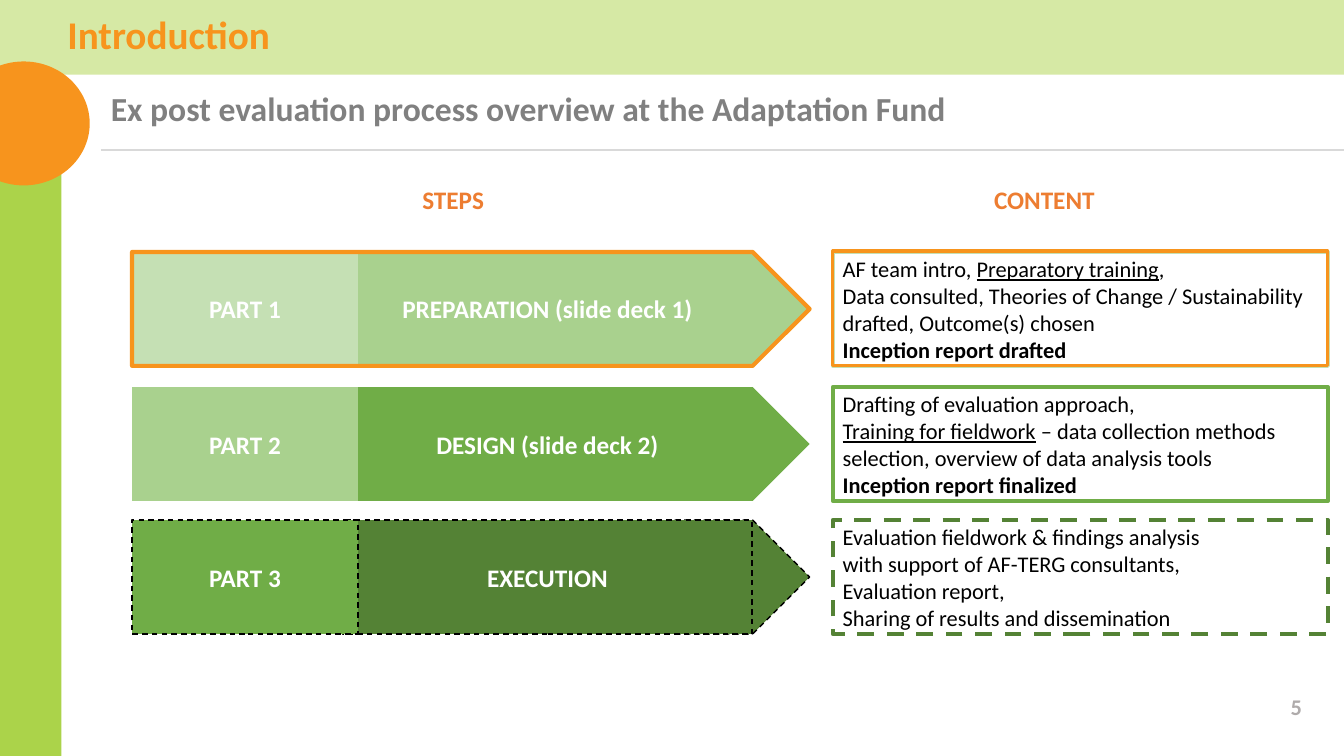
"""Build the ex post evaluation process overview slide."""
from dataclasses import dataclass

from lxml.etree import SubElement
from pptx import Presentation
from pptx.dml.color import RGBColor
from pptx.enum.dml import MSO_LINE
from pptx.enum.shapes import MSO_CONNECTOR, MSO_SHAPE
from pptx.enum.text import MSO_ANCHOR, PP_ALIGN
from pptx.oxml.ns import qn
from pptx.util import Inches, Pt

ORANGE = "F7941D"
ROW_HEIGHT = 1.13
LABEL_LEFT = 1.31
CONTENT_LEFT, CONTENT_WIDTH = 8.26, 4.91


@dataclass(frozen=True)
class Span:
    text: str
    size: float = 16
    color: str = "000000"
    bold: bool = False
    underline: bool = False


@dataclass(frozen=True)
class Outline:
    color: str
    width: float
    dashed: bool = False


@dataclass(frozen=True)
class Step:
    top: float
    label: str
    title: str
    label_fill: str
    arrow_fill: str
    arrow_outline: Outline | None
    content_outline: Outline
    content: list[list[Span]]


STEPS = [
    Step(2.5, "PART 1", "PREPARATION (slide deck 1)", "C5E0B4", "A9D18E", None,
         Outline("C5E0B4", 3), [
             [Span("AF team intro, "), Span("Preparatory training", underline=True), Span(",")],
             [Span("Data consulted, Theories of Change / Sustainability drafted, "
                   "Outcome(s) chosen")],
             [Span("Inception report drafted", bold=True)]]),
    Step(3.84, "PART 2", "DESIGN (slide deck 2)", "A9D18E", "70AD47", None,
         Outline("70AD47", 3), [
             [Span("Drafting of evaluation approach,")],
             [Span("Training for fieldwork", underline=True),
              Span(" – data collection methods selection, overview of data analysis tools")],
             [Span("Inception report finalized", bold=True)]]),
    Step(5.16, "PART 3", "EXECUTION", "70AD47", "548235", Outline("000000", 1, True),
         Outline("548235", 3, True), [
             [Span("Evaluation fieldwork & findings analysis")],
             [Span("with support of AF-TERG consultants,")],
             [Span("Evaluation report,")],
             [Span("Sharing of results and dissemination")]]),
]


def rgb(color: str) -> RGBColor:
    """Turn a hex string into a colour."""
    return RGBColor.from_string(color)


def write(box, paragraphs: list[list[Span]], align=PP_ALIGN.LEFT,
          anchor=MSO_ANCHOR.TOP, spacing: float = 1.0, tabs: tuple[float, ...] = ()) -> None:
    """Fill a box with paragraphs, run by run."""
    frame = box.text_frame
    frame.word_wrap = True
    frame.vertical_anchor = anchor
    for index, spans in enumerate(paragraphs):
        para = frame.paragraphs[0] if index == 0 else frame.add_paragraph()
        para.alignment = align
        para.line_spacing = spacing
        if tabs:
            tab_list = SubElement(para._p.get_or_add_pPr(), qn("a:tabLst"))
            for position in tabs:
                SubElement(tab_list, qn("a:tab"), pos=str(Inches(position)), algn="l")
        for span in spans:
            run = para.add_run()
            run.text = span.text
            run.font.name = "Calibri"
            run.font.size = Pt(span.size)
            run.font.bold = span.bold
            run.font.underline = span.underline
            run.font.color.rgb = rgb(span.color)


def add_block(shapes, kind, left: float, top: float, width: float, height: float,
              fill: str | None = None, outline: Outline | None = None):
    """Add a preset shape with an optional fill and outline."""
    block = shapes.add_shape(kind, Inches(left), Inches(top), Inches(width), Inches(height))
    block.shadow.inherit = False
    if fill:
        block.fill.solid()
        block.fill.fore_color.rgb = rgb(fill)
    else:
        block.fill.background()
    if outline:
        block.line.color.rgb = rgb(outline.color)
        block.line.width = Pt(outline.width)
        if outline.dashed:
            block.line.dash_style = MSO_LINE.DASH
    else:
        block.line.fill.background()
    return block


def add_text(page, left: float, top: float, width: float, height: float,
             span: Span, **layout) -> None:
    """Add a text box holding one span."""
    box = page.shapes.add_textbox(Inches(left), Inches(top), Inches(width), Inches(height))
    write(box, [[span]], **layout)


def add_label(block, text: str) -> None:
    """Centre a white bold label in a block."""
    write(block, [[Span(text, 18, "FFFFFF", True)]], PP_ALIGN.CENTER, MSO_ANCHOR.MIDDLE)


def add_frame(page) -> None:
    """Draw the side bar, header band, circle, rule and headings."""
    add_block(page.shapes, MSO_SHAPE.RECTANGLE, -0.13, 0, 0.74, 7.5, "ABD34A")
    add_block(page.shapes, MSO_SHAPE.RECTANGLE, -0.11, -0.01, 13.44, 0.75, "D6E9A5")
    add_block(page.shapes, MSO_SHAPE.OVAL, -0.42, 0.61, 1.31, 1.23, ORANGE)
    add_text(page, 12.1, 6.81, 0.91, 0.4, Span("5", 16, "AFABAB", True),
             align=PP_ALIGN.RIGHT, anchor=MSO_ANCHOR.MIDDLE)
    add_text(page, 0.57, 0.11, 6.39, 0.64, Span("Introduction", 28, ORANGE, True), spacing=0.9)
    add_text(page, 1, 0.87, 11.72, 0.46,
             Span("Ex post evaluation process overview at the Adaptation Fund",
                  24, "808080", True), spacing=0.9)
    rule = page.shapes.add_connector(MSO_CONNECTOR.STRAIGHT, Inches(1), Inches(1.49),
                                     Inches(13.33), Inches(1.49))
    rule.line.color.rgb = rgb("D9D9D9")
    rule.line.width = Pt(1.5)
    SubElement(rule._element.spPr, qn("a:effectLst"))
    add_text(page, 1.09, 1.78, 11.92, 0.4, Span("\tSTEPS\tCONTENT", 18, "ED7D31", True),
             tabs=(3, 8.67))


def add_step(page, step: Step) -> None:
    """Draw one step: its arrow, label and content box."""
    arrow = page.shapes.add_group_shape().shapes
    add_block(arrow, MSO_SHAPE.PENTAGON, 6.69, step.top, 1.34, ROW_HEIGHT,
              step.arrow_fill, step.arrow_outline)
    body = add_block(arrow, MSO_SHAPE.RECTANGLE, 3.4, step.top, 4.06, ROW_HEIGHT,
                     step.arrow_fill, step.arrow_outline)
    add_label(body, step.title)
    label = add_block(page.shapes, MSO_SHAPE.RECTANGLE, LABEL_LEFT, step.top, 2.24, ROW_HEIGHT,
                      step.label_fill, step.arrow_outline)
    add_label(label, step.label)
    content = add_block(page.shapes, MSO_SHAPE.RECTANGLE, CONTENT_LEFT, step.top,
                        CONTENT_WIDTH, ROW_HEIGHT, "FFFFFF", step.content_outline)
    write(content, step.content, anchor=MSO_ANCHOR.MIDDLE)


def add_highlight(page, step: Step) -> None:
    """Outline the current step in orange."""
    add_block(page.shapes, MSO_SHAPE.PENTAGON, LABEL_LEFT, step.top, 6.72, ROW_HEIGHT,
              outline=Outline(ORANGE, 3))
    add_block(page.shapes, MSO_SHAPE.RECTANGLE, CONTENT_LEFT, step.top - 0.01,
              CONTENT_WIDTH, ROW_HEIGHT + 0.01, outline=Outline(ORANGE, 2.25))


def main() -> None:
    """Build and save the deck."""
    deck = Presentation()
    deck.slide_width, deck.slide_height = Inches(13.33), Inches(7.5)
    page = deck.slides.add_slide(deck.slide_layouts[6])
    add_frame(page)
    for step in STEPS:
        add_step(page, step)
    add_highlight(page, STEPS[0])
    deck.save("out.pptx")


if __name__ == "__main__":
    main()
